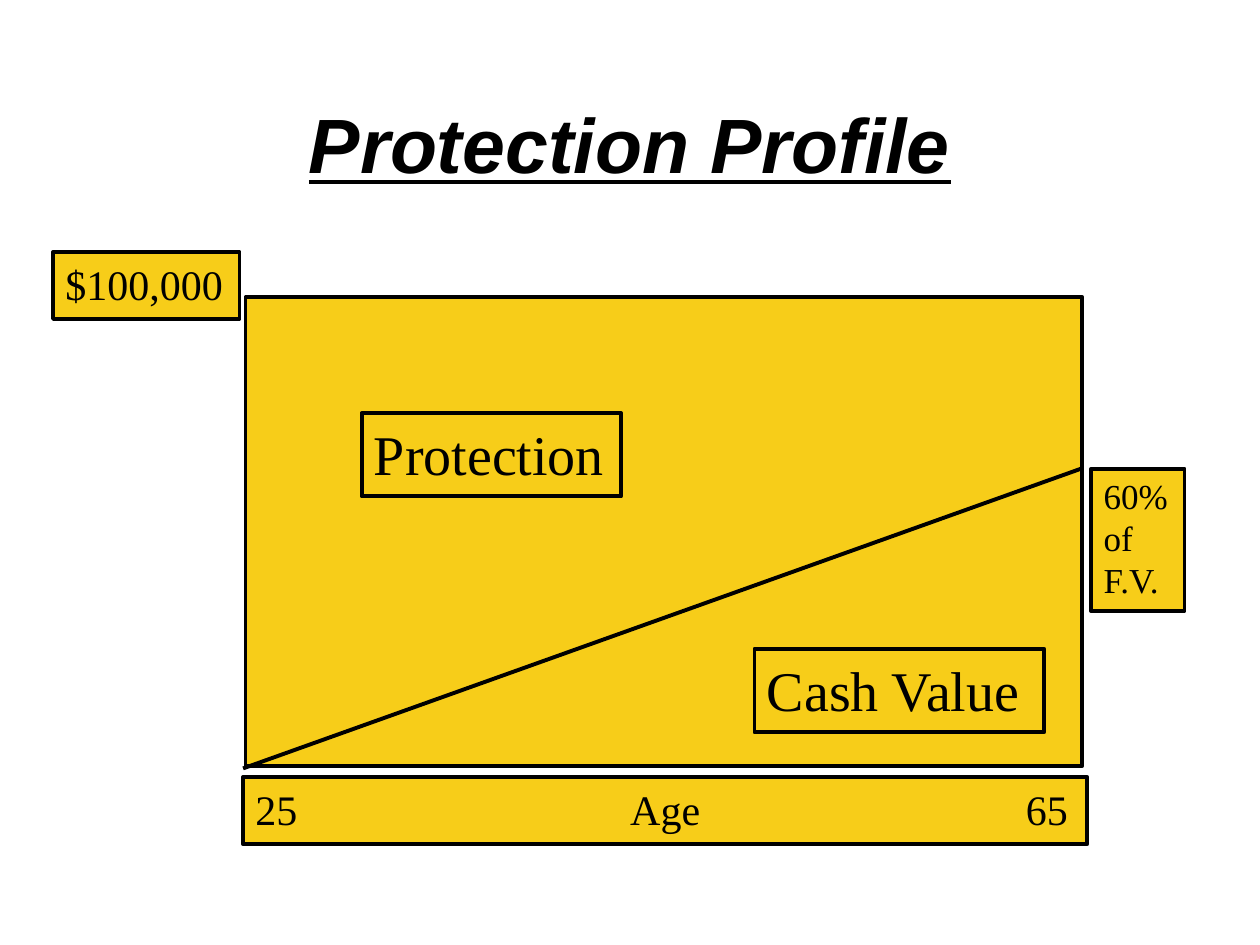
import pptx
import pptx.util
import pptx.dml.color
import pptx.enum.shapes
import pptx.enum.text
import lxml.etree
from pptx.util import Cm, Pt

COLORS = {"gold": "F7CD19", "black": "000000"}
TITLE = ("Protection Profile", (1.27, 0.76, 22.86, 3.18))

# Text, (left, top, width, height) in cm, text size in points; back to front
AGE_BAR = ("25\tAge\t65", (4.9, 15.67, 17.02, 1.35), 24)
CHART_AREA = ("", (4.95, 5.99, 16.87, 9.45), 24)
PROTECTION = ("Protection", (7.29, 8.33, 5.23, 1.68), 32)
FACE_VALUE = ("$100,000", (1.07, 5.08, 3.76, 1.35), 24)
CASH_VALUE = ("Cash Value", (15.21, 13.08, 5.84, 1.68), 32)
FINAL_SHARE = ("60%\nof\nF.V.", (22, 9.45, 1.88, 2.87), 20)
GROWTH_LINE = (4.9, 15.49, 21.79, 9.45)
AGE_TABS = [("ctr", 8.26), ("r", 16.38)]


def color(name):
    return pptx.dml.color.RGBColor.from_string(COLORS[name])


def style_line(line):
    line.color.rgb = color("black")
    line.width = Pt(2.25)


def style_text(frame, text, size, font, align):
    frame.word_wrap = True
    frame.text = text
    for para in frame.paragraphs:
        para.alignment = align
        for span in para.runs:
            span.font.name = font
            span.font.size = Pt(size)
            span.font.color.rgb = color("black")


def add_box(page, text, place, size):
    box = page.shapes.add_shape(
        pptx.enum.shapes.MSO_SHAPE.RECTANGLE, *map(Cm, place))
    box.shadow.inherit = False
    box.fill.solid()
    box.fill.fore_color.rgb = color("gold")
    style_line(box.line)
    if text:
        style_text(box.text_frame, text, size, "Times New Roman",
                   pptx.enum.text.PP_ALIGN.LEFT)
        box.text_frame.vertical_anchor = pptx.enum.text.MSO_ANCHOR.TOP
    return box


def add_tabs(para, tabs):
    props = para._p.get_or_add_pPr()
    tab_list = lxml.etree.SubElement(props, pptx.oxml.ns.qn("a:tabLst"))
    for align, position in tabs:
        lxml.etree.SubElement(tab_list, pptx.oxml.ns.qn("a:tab"),
                              pos=str(Cm(position)), algn=align)


def main():
    deck = pptx.Presentation()
    deck.slide_width, deck.slide_height = Cm(25.4), Cm(19.05)
    page = deck.slides.add_slide(deck.slide_layouts[6])

    # Title
    text, place = TITLE
    title = page.shapes.add_textbox(*map(Cm, place))
    style_text(title.text_frame, text, 44, "Arial",
               pptx.enum.text.PP_ALIGN.CENTER)
    title.text_frame.vertical_anchor = pptx.enum.text.MSO_ANCHOR.BOTTOM
    font = title.text_frame.paragraphs[0].runs[0].font
    font.bold = font.italic = font.underline = True

    # Age axis, chart area and labels
    age_bar = add_box(page, *AGE_BAR)
    add_tabs(age_bar.text_frame.paragraphs[0], AGE_TABS)
    for label in (CHART_AREA, PROTECTION, FACE_VALUE):
        add_box(page, *label)

    # Cash value growth
    growth = page.shapes.add_connector(
        pptx.enum.shapes.MSO_CONNECTOR.STRAIGHT, *map(Cm, GROWTH_LINE))
    style_line(growth.line)
    lxml.etree.SubElement(growth._element.spPr,
                          pptx.oxml.ns.qn("a:effectLst"))
    for label in (CASH_VALUE, FINAL_SHARE):
        add_box(page, *label)

    deck.save("out.pptx")


if __name__ == "__main__":
    main()
